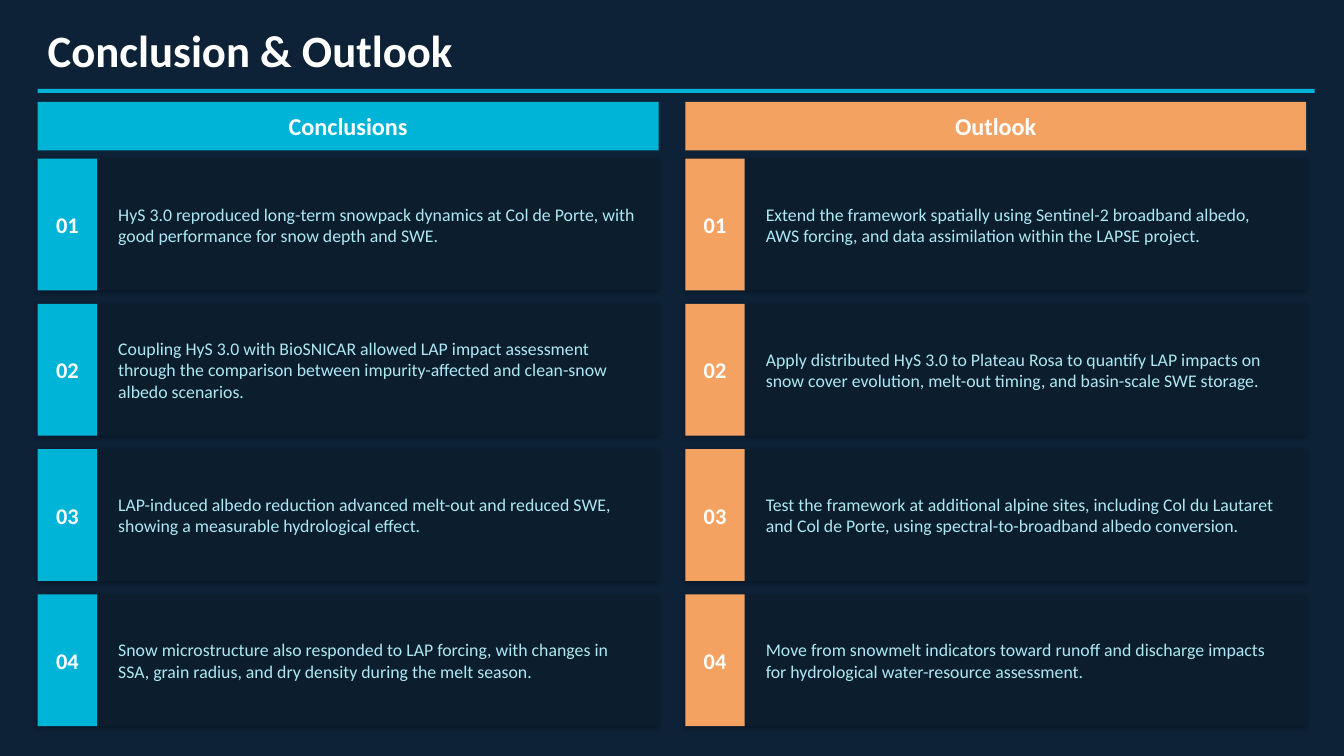
import pptx
import pptx.util
import pptx.dml.color
import pptx.enum.shapes
import pptx.enum.text
import pptx.oxml
import pptx.oxml.ns

Cm = pptx.util.Cm
ALIGN = pptx.enum.text.PP_ALIGN
MIDDLE = pptx.enum.text.MSO_ANCHOR.MIDDLE

HEADING = "Conclusion & Outlook"
COLUMNS = [
    ("Conclusions", "00B4D8", [
        "HyS 3.0 reproduced long-term snowpack dynamics at Col de Porte, with good performance for snow depth and SWE.",
        "Coupling HyS 3.0 with BioSNICAR allowed LAP impact assessment through the comparison between impurity-affected and clean-snow albedo scenarios.",
        "LAP-induced albedo reduction advanced melt-out and reduced SWE, showing a measurable hydrological effect.",
        "Snow microstructure also responded to LAP forcing, with changes in SSA, grain radius, and dry density during the melt season.",
    ]),
    ("Outlook", "F4A261", [
        "Extend the framework spatially using Sentinel-2 broadband albedo, AWS forcing, and data assimilation within the LAPSE project.",
        "Apply distributed HyS 3.0 to Plateau Rosa to quantify LAP impacts on snow cover evolution, melt-out timing, and basin-scale SWE storage.",
        "Test the framework at additional alpine sites, including Col du Lautaret and Col de Porte, using spectral-to-broadband albedo conversion.",
        "Move from snowmelt indicators toward runoff and discharge impacts for hydrological water-resource assessment.",
    ]),
]

BACKGROUND, CARD, WHITE, PALE = "0D2137", "0C1E2E", "FFFFFF", "ADE8F4"
TITLE_STYLE = {"size": 32, "color": WHITE, "bold": True, "align": ALIGN.LEFT}
HEADER_STYLE = {"size": 17.3, "color": WHITE, "bold": True, "align": ALIGN.CENTER}
NUMBER_STYLE = {**HEADER_STYLE, "size": 16}
POINT_STYLE = {"size": 12.7, "color": PALE, "bold": False, "align": ALIGN.LEFT}

LEFT, COLUMN_PITCH, COLUMN_WIDTH = 0.95, 16.32, 15.65
HEADER_TOP, HEADER_HEIGHT = 2.57, 1.22
CARD_TOP, CARD_PITCH, CARD_HEIGHT = 4, 3.66, 3.32
NUMBER_WIDTH = 1.5


def rgb(color):
    return pptx.dml.color.RGBColor.from_string(color)


def write(shape, text, style, insets):
    frame = shape.text_frame
    frame.text = text
    sides = ("margin_left", "margin_top", "margin_right", "margin_bottom")
    settings = dict(zip(sides, map(Cm, insets)))
    settings.update(word_wrap=True, vertical_anchor=MIDDLE)
    for name, value in settings.items():
        setattr(frame, name, value)
    paragraph = frame.paragraphs[0]
    paragraph.alignment = style["align"]
    font = {"name": "Calibri", "size": pptx.util.Pt(style["size"]), "bold": style["bold"]}
    for name, value in font.items():
        setattr(paragraph.runs[0].font, name, value)
    paragraph.runs[0].font.color.rgb = rgb(style["color"])


def block(slide, box, fill):
    shape = slide.shapes.add_shape(pptx.enum.shapes.MSO_SHAPE.RECTANGLE, *map(Cm, box))
    shape.fill.solid()
    shape.fill.fore_color.rgb = rgb(fill)
    shape.line.fill.background()
    shape.shadow.inherit = False
    return shape


def cast_shadow(shape):
    effects = shape._element.spPr.find(pptx.oxml.ns.qn("a:effectLst"))
    effects.append(pptx.oxml.parse_xml(
        f'<a:outerShdw {pptx.oxml.ns.nsdecls("a")} blurRad="38100" dist="12700" dir="8100000" '
        'algn="bl" rotWithShape="0"><a:srgbClr val="000000"><a:alpha val="25000"/>'
        '</a:srgbClr></a:outerShdw>'))


def add_column(slide, left, header, accent, points):
    banner = block(slide, (left, HEADER_TOP, COLUMN_WIDTH, HEADER_HEIGHT), accent)
    write(banner, header, HEADER_STYLE, (0, 0, 0, 0))
    for index, point in enumerate(points):
        top = CARD_TOP + index * CARD_PITCH
        card = block(slide, (left, top, COLUMN_WIDTH, CARD_HEIGHT), CARD)
        cast_shadow(card)
        write(card, point, POINT_STYLE, (2.03, 0.33, 0.51, 0.33))
        number = block(slide, (left, top, NUMBER_WIDTH, CARD_HEIGHT), accent)
        write(number, f"{index + 1:02d}", NUMBER_STYLE, (0, 0, 0, 0))


def main():
    deck = pptx.Presentation()
    deck.slide_width, deck.slide_height = Cm(33.87), Cm(19.05)
    slide = deck.slides.add_slide(deck.slide_layouts[5])
    slide.background.fill.solid()
    slide.background.fill.fore_color.rgb = rgb(BACKGROUND)

    title = slide.shapes.title
    place = {"left": 0.95, "top": 0.28, "width": 32.18, "height": 1.96}
    for name, value in place.items():
        setattr(title, name, Cm(value))
    write(title, HEADING, TITLE_STYLE, (0.25, 0.13, 0.25, 0.13))

    block(slide, (LEFT, 2.24, 32.18, 0.1), COLUMNS[0][1])
    for index, column in enumerate(COLUMNS):
        add_column(slide, LEFT + index * COLUMN_PITCH, *column)
    deck.save("out.pptx")


if __name__ == "__main__":
    main()
